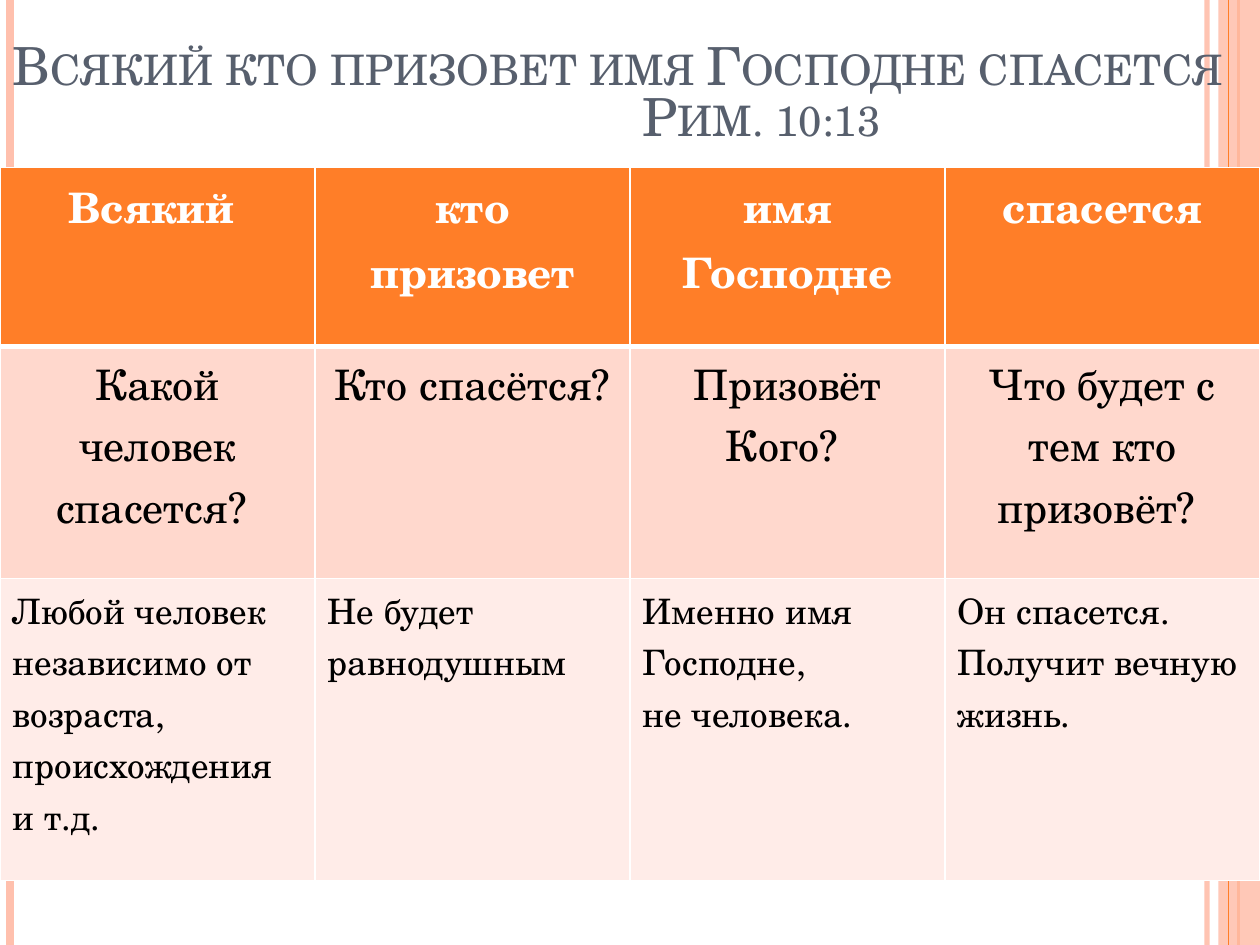
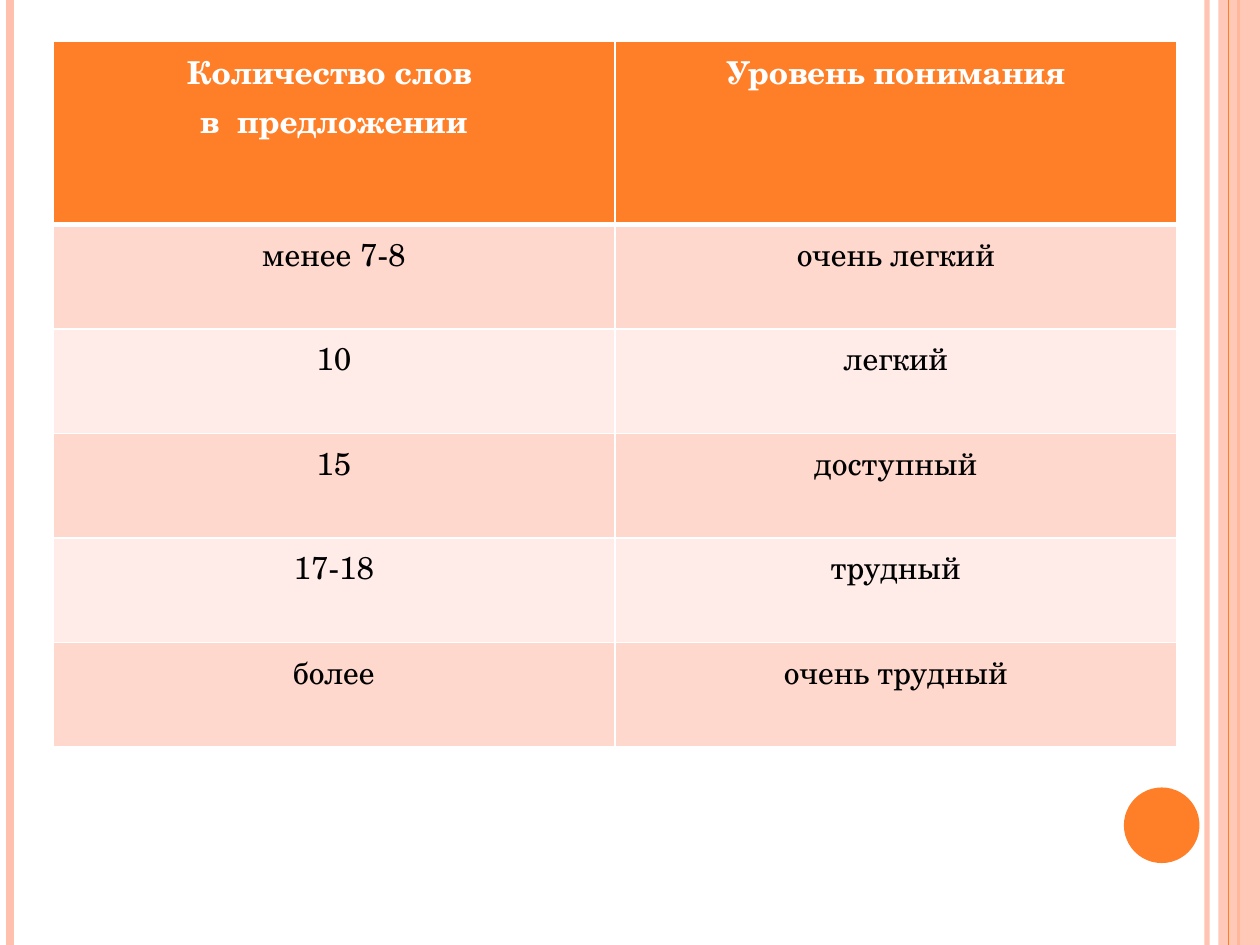
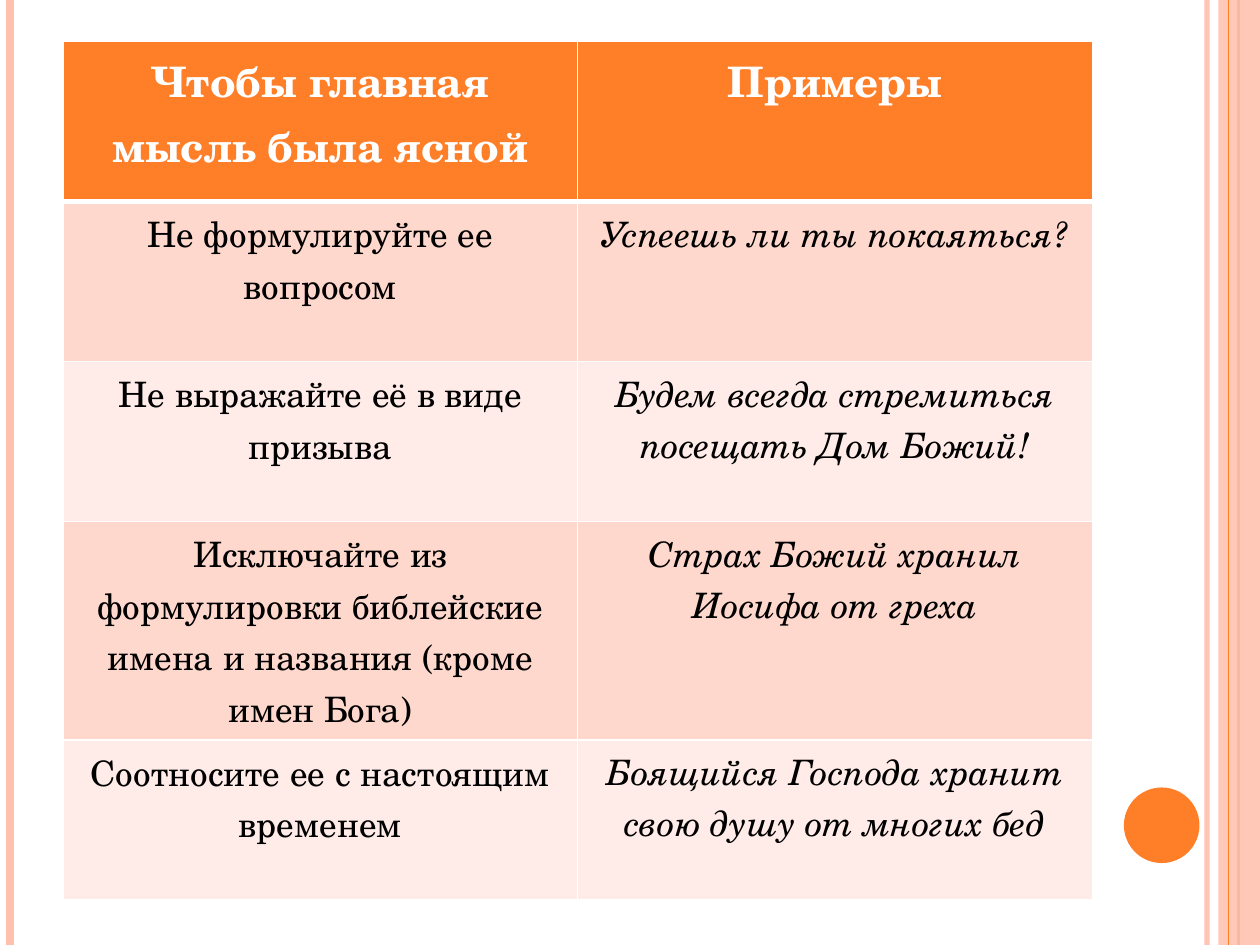
import pptx
import pptx.util
import pptx.dml.color
import pptx.enum.shapes
import pptx.enum.text
import pptx.oxml
import pptx.oxml.ns
from lxml import etree

Inches = pptx.util.Inches
Pt = pptx.util.Pt
qn = pptx.oxml.ns.qn
ALIGN = pptx.enum.text.PP_ALIGN
SHAPE = pptx.enum.shapes.MSO_SHAPE

FONT = "TeX Gyre Schola"
ORANGE, PEACH, WHITE, BLACK, SLATE = "FF7E28", "FFC0AD", "FFFFFF", "000000", "575F6D"
BANDS = ["FFD8CD", "FFECE8"]


def paint(color_format, color, opacity=100):
    color_format.rgb = pptx.dml.color.RGBColor.from_string(color)
    if opacity < 100:
        for tint in color_format._xFill.iter(qn("a:srgbClr")):
            etree.SubElement(tint, qn("a:alpha")).set("val", str(opacity * 1000))


def write(paragraph, text, size, color, bold=False, italic=False):
    run = paragraph.add_run()
    run.text = text
    run.font.name = FONT
    run.font.size = Pt(size)
    run.font.bold = bold
    run.font.italic = italic
    paint(run.font.color, color)
    return run


verse_lines = [("Всякий кто призовет имя Господне спасется", 0), ("Рим. 10:13", 5)]

slides = [
    {
        "title": verse_lines,
        "box": (0, 1.33, 10),
        "heights": [1.42, 1.84, 2.4],
        "sizes": [24, 24, 20],
        "left_rows": [2],
        "italic_columns": [],
        "cells": [
            ["Всякий ", "кто призовет", "имя Господне", "спасется"],
            ["Какой человек спасется? ", "Кто спасётся?", "Призовёт Кого? ",
             "Что будет с тем кто призовёт? "],
            ["Любой человек независимо от возраста, происхождения и т.д.",
             "Не будет равнодушным", "Именно имя Господне,\nне человека.",
             "Он спасется. Получит вечную жизнь."],
        ],
    },
    {
        "title": [],
        "box": (0.42, 0.33, 8.92),
        "heights": [1.42] + [0.83] * 5,
        "sizes": [18] * 6,
        "left_rows": [],
        "italic_columns": [],
        "cells": [
            ["Количество слов \nв  предложении", "Уровень понимания"],
            ["менее 7-8", "очень легкий"],
            ["10", "легкий"],
            ["15", "доступный"],
            ["17-18", "трудный"],
            ["более", "очень трудный"],
        ],
    },
    {
        "title": [],
        "box": (0.5, 0.33, 8.17),
        "heights": [1.27] * 5,
        "sizes": [24] + [20] * 4,
        "left_rows": [],
        "italic_columns": [1],
        "cells": [
            ["Чтобы главная мысль была ясной", "Примеры"],
            ["Не формулируйте ее вопросом", "Успеешь ли ты покаяться?"],
            ["Не выражайте её в виде призыва",
             "Будем всегда стремиться посещать Дом Божий!"],
            ["Исключайте из формулировки библейские имена и названия (кроме имен Бога)",
             "Страх Божий хранил Иосифа от греха"],
            ["Соотносите ее с настоящим временем",
             "Боящийся Господа хранит свою душу от многих бед"],
        ],
    },
]
slides[1]["heights"][0] = 1.45

stripes = [(9.58, PEACH, 3, 93), (0.08, PEACH, 4.5, 100),
           (9.83, ORANGE, 1.5, 100), (9.75, ORANGE, 0.75, 100)]
side_band = (SHAPE.RECTANGLE, 9.67, 0, 0.33, 7.5, PEACH, 87)
page_dot = (SHAPE.OVAL, 8.92, 6.25, 0.6, 0.6, ORANGE, 100)

deck = pptx.Presentation()
deck.slide_width = Inches(10)
deck.slide_height = Inches(7.5)

for content in slides:
    slide = deck.slides.add_slide(deck.slide_layouts[6])

    ornaments = stripes[:3] + [side_band] + stripes[3:]
    if not content["title"]:
        ornaments.append(page_dot)
    for ornament in ornaments:
        if len(ornament) == 4:
            x, color, weight, opacity = ornament
            stripe = slide.shapes.add_connector(
                pptx.enum.shapes.MSO_CONNECTOR.STRAIGHT,
                Inches(x), 0, Inches(x), Inches(7.5))
            stripe.line.width = Pt(weight)
            stripe.line.fill.solid()
            paint(stripe.line.fill.fore_color, color, opacity)
            etree.SubElement(stripe._element.spPr, qn("a:effectLst"))
        else:
            preset, *place, color, opacity = ornament
            accent = slide.shapes.add_shape(preset, *[Inches(value) for value in place])
            accent.shadow.inherit = False
            accent.fill.solid()
            paint(accent.fill.fore_color, color, opacity)
            accent.line.fill.background()

    if content["title"]:
        title = slide.shapes.add_textbox(0, 0, Inches(10), Inches(1.17)).text_frame
        title.word_wrap = True
        title.vertical_anchor = pptx.enum.text.MSO_ANCHOR.BOTTOM
        title.margin_bottom = Inches(0.01)
        for index, (text, indent) in enumerate(content["title"]):
            paragraph = title.paragraphs[0] if index == 0 else title.add_paragraph()
            paragraph.line_spacing = 0.8
            paragraph._p.get_or_add_pPr().set("marL", str(Inches(indent)))
            run = write(paragraph, text, 30, SLATE)
            run.font._element.set("cap", "small")

    left, top, width = content["box"]
    rows, columns = len(content["cells"]), len(content["cells"][0])
    table = slide.shapes.add_table(
        rows, columns, Inches(left), Inches(top), Inches(width),
        Inches(sum(content["heights"]))).table
    for row, texts in enumerate(content["cells"]):
        table.rows[row].height = Inches(content["heights"][row])
        header = row == 0
        for column, text in enumerate(texts):
            cell = table.cell(row, column)
            weights = {"L": 1, "R": 1, "T": 3 if row == 1 else 1, "B": 3 if header else 1}
            for side, weight in weights.items():
                border = etree.SubElement(cell._tc.get_or_add_tcPr(), qn("a:ln" + side))
                border.set("w", str(Pt(weight)))
                border_fill = etree.SubElement(border, qn("a:solidFill"))
                etree.SubElement(border_fill, qn("a:srgbClr")).set("val", WHITE)
            cell.fill.solid()
            paint(cell.fill.fore_color, ORANGE if header else BANDS[(row - 1) % 2])
            for index, line in enumerate(text.split("\n")):
                frame = cell.text_frame
                paragraph = frame.paragraphs[0] if index == 0 else frame.add_paragraph()
                paragraph.alignment = ALIGN.LEFT if row in content["left_rows"] else ALIGN.CENTER
                write(paragraph, line, content["sizes"][row], WHITE if header else BLACK,
                      bold=header, italic=not header and column in content["italic_columns"])

deck.save("out.pptx")
